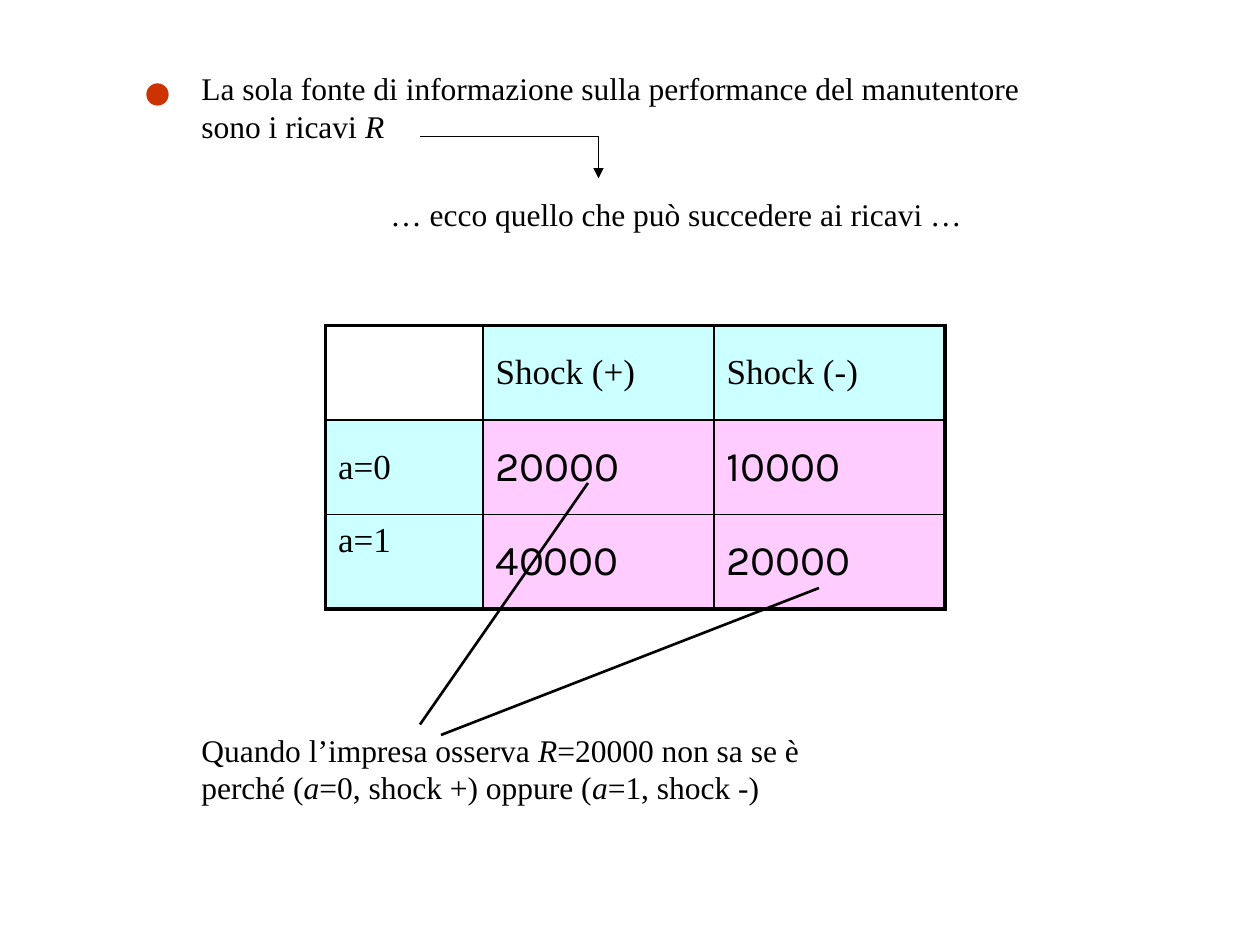
from dataclasses import dataclass

from lxml.etree import SubElement
from pptx import Presentation
from pptx.dml.color import RGBColor
from pptx.enum.shapes import MSO_CONNECTOR, MSO_SHAPE
from pptx.enum.text import MSO_ANCHOR, MSO_AUTO_SIZE
from pptx.oxml.ns import qn
from pptx.slide import Slide
from pptx.util import Pt

BLACK = RGBColor(0x00, 0x00, 0x00)
RED = RGBColor(0xCC, 0x33, 0x00)
CYAN = RGBColor(0xCC, 0xFF, 0xFF)
PINK = RGBColor(0xFF, 0xCC, 0xFF)

BODY = {"name": "Times New Roman", "size": Pt(18)}
HEADING = {"name": "Times New Roman", "size": Pt(20)}
FIGURE = {"name": "Karla", "size": Pt(24)}

THIN, THICK = 1, 2.25


@dataclass
class SlideWriter:
    slide: Slide
    ink: RGBColor = BLACK

    def format_span(self, span, style):
        for attribute, value in style.items():
            setattr(span.font, attribute, value)
        span.font.color.rgb = self.ink

    def text(self, left, top, width, height, spans, wrap=True):
        box = self.slide.shapes.add_textbox(Pt(left), Pt(top), Pt(width), Pt(height))
        frame = box.text_frame
        frame.word_wrap = wrap
        frame.auto_size = MSO_AUTO_SIZE.SHAPE_TO_FIT_TEXT
        para = frame.paragraphs[0]
        for words, italic in spans:
            span = para.add_run()
            span.text = words
            self.format_span(span, BODY | {"italic": italic})

    def dot(self, left, top, size, color):
        dot = self.slide.shapes.add_shape(
            MSO_SHAPE.OVAL, Pt(left), Pt(top), Pt(size), Pt(size))
        dot.shadow.inherit = False
        dot.fill.solid()
        dot.fill.fore_color.rgb = color
        dot.line.color.rgb = color
        dot.line.width = Pt(0.75)

    def line(self, start, end, width, arrow=False):
        points = [Pt(value) for value in (*start, *end)]
        line = self.slide.shapes.add_connector(MSO_CONNECTOR.STRAIGHT, *points)
        line.line.color.rgb = self.ink
        line.line.width = Pt(width)
        if arrow:
            SubElement(line.line._get_or_add_ln(), qn("a:tailEnd"), type="triangle")
        SubElement(line._element.spPr, qn("a:effectLst"))

    def borders(self, cell, widths):
        properties = cell._tc.get_or_add_tcPr()
        for side, width in zip("LRTB", widths):
            border = SubElement(properties, qn(f"a:ln{side}"), w=str(Pt(width)))
            fill = SubElement(border, qn("a:solidFill"))
            SubElement(fill, qn("a:srgbClr"), val=str(self.ink))

    def table(self, left, top, widths, row_height, rows):
        last_row, last_column = len(rows) - 1, len(widths) - 1
        table = self.slide.shapes.add_table(
            len(rows), len(widths), Pt(left), Pt(top),
            Pt(sum(widths)), Pt(row_height * len(rows))).table
        table.first_row = table.horz_banding = False
        for column, width in zip(table.columns, widths):
            column.width = Pt(width)
        for row_index, row in enumerate(rows):
            for column_index, words in enumerate(row):
                cell = table.cell(row_index, column_index)
                edges = (column_index == 0, column_index == last_column,
                         row_index == 0, row_index == last_row)
                self.borders(cell, [THICK if edge else THIN for edge in edges])
                if not words:
                    cell.fill.background()
                    continue
                is_heading = row_index == 0 or column_index == 0
                cell.fill.solid()
                cell.fill.fore_color.rgb = CYAN if is_heading else PINK
                low_heading = row_index == last_row and column_index == 0
                cell.vertical_anchor = MSO_ANCHOR.TOP if low_heading else MSO_ANCHOR.MIDDLE
                para = cell.text_frame.paragraphs[0]
                para.space_before = Pt(4)
                span = para.add_run()
                span.text = words
                self.format_span(span, HEADING if is_heading else FIGURE)


def main():
    deck = Presentation()
    deck.slide_width, deck.slide_height = Pt(720), Pt(540)
    page = SlideWriter(deck.slides.add_slide(deck.slide_layouts[6]))

    page.text(108, 36, 492, 50.4, [
        ("La sola fonte di informazione sulla performance del manutentore sono i ricavi ", False),
        ("R", True)])
    page.dot(84, 48, 12, RED)
    page.text(216, 108, 341, 28.8,
              [("… ecco quello che può succedere ai ricavi …", False)], wrap=False)
    page.line((240, 78), (342, 78), 0.75)
    page.line((342, 78), (342, 102), 0.75, arrow=True)

    page.table(186, 186, [90, 132, 132], 54, [
        ["", "Shock (+)", "Shock (-)"],
        ["a=0", "20000", "10000"],
        ["a=1", "40000", "20000"]])

    page.text(108, 414, 357, 50.4, [
        ("Quando l’impresa osserva ", False), ("R", True),
        ("=20000 non sa se è perché (", False), ("a", True),
        ("=0, shock +) oppure (", False), ("a", True),
        ("=1, shock -)", False)])
    page.line((336, 276), (240, 414), 1.5)
    page.line((468, 336), (252, 420), 1.5)

    deck.save("out.pptx")


if __name__ == "__main__":
    main()
